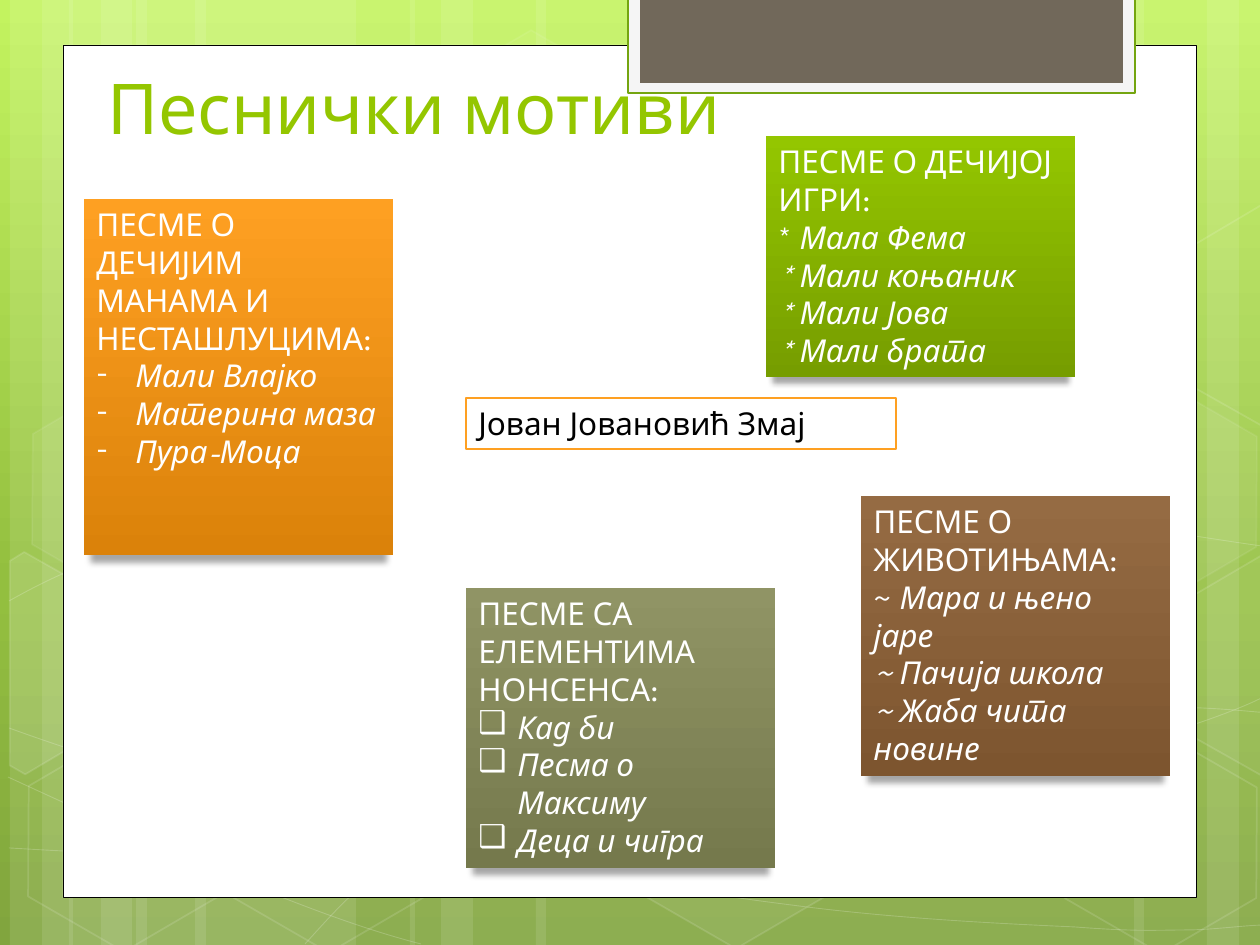
from copy import deepcopy
from math import cos, radians, sin

from lxml import etree
from pptx import Presentation
from pptx.dml.color import RGBColor
from pptx.enum.shapes import MSO_SHAPE
from pptx.enum.text import MSO_ANCHOR, PP_ALIGN
from pptx.oxml.ns import qn
from pptx.util import Emu, Pt

RECTANGLE, HEXAGON = MSO_SHAPE.RECTANGLE, MSO_SHAPE.HEXAGON
TOP, BOTTOM = MSO_ANCHOR.TOP, MSO_ANCHOR.BOTTOM
LEFT = PP_ALIGN.LEFT

EMU_PER_PX = 914400 / 126
WIDTH, HEIGHT = 1260, 945
FONT = "League Spartan"
LANGUAGE = "sr-Cyrl-RS"
INDENT = 39
TILT = 30

WHITE = RGBColor(0xFF, 0xFF, 0xFF)
BLACK = RGBColor(0, 0, 0)
LIME = RGBColor(0x94, 0xC6, 0x00)
DARK_LIME = RGBColor(0x76, 0x9D, 0x00)
ORANGE = RGBColor(0xFE, 0xA0, 0x22)
DARK_ORANGE = RGBColor(0xDB, 0x82, 0x0A)
BROWN = RGBColor(0x95, 0x6B, 0x43)
DARK_BROWN = RGBColor(0x7D, 0x55, 0x2F)
OLIVE = RGBColor(0x90, 0x94, 0x65)
DARK_OLIVE = RGBColor(0x75, 0x79, 0x4C)
TAB_BORDER = RGBColor(0x74, 0xA5, 0x10)
TAB_PAPER = RGBColor(0xF5, 0xF5, 0xF5)
TAB_GRAY = RGBColor(0x71, 0x68, 0x5A)
BACKGROUND_STOPS = [(0, RGBColor(0xC3, 0xF3, 0x5F)), (0.62, RGBColor(0x93, 0xBF, 0x3F)),
                    (1, RGBColor(0x81, 0xA5, 0x3E))]

# left, width
STRIPES = [(136, 220), (10, 63), (42, 105), (195, 220), (69, 63), (101, 105),
           (924, 220), (1207, 63), (1134, 105), (536, 388), (410, 63), (441, 105)]
# start, then two controls and an end for each Bézier segment
CURVES = [
    [(9, 848), (77, 852), (145, 856), (239, 854), (334, 853), (451, 851), (577, 838),
     (703, 825), (882, 802), (998, 777), (1113, 753), (1231, 716), (1269, 694)],
    [(9, 601), (45, 581), (82, 562), (152, 543), (229, 524), (326, 496), (437, 488),
     (549, 479), (685, 478), (824, 488), (963, 497), (1193, 537), (1269, 547)],
    [(8, 777), (160, 847), (311, 916), (421, 944)],
    [(9, 728), (48, 742), (88, 756), (161, 776), (234, 795), (344, 827), (450, 848),
     (554, 869), (687, 892), (791, 905), (896, 919), (1008, 924), (1075, 927),
     (1140, 932), (1158, 930), (1191, 930), (1223, 929), (1246, 925), (1269, 925)],
    [(305, 944), (328, 919), (350, 893), (381, 871), (411, 848), (454, 823), (489, 805),
     (524, 788), (546, 780), (592, 767), (638, 754), (722, 737), (766, 728),
     (811, 719), (818, 719), (857, 717), (896, 713), (958, 709), (1000, 708),
     (1045, 707), (1116, 708), (1116, 708), (1116, 708), (1201, 708), (1201, 708),
     (1224, 709), (1245, 711), (1256, 712), (1268, 713), (1264, 712), (1268, 713)],
]
# left, top, fill opacity, line opacity
HEXAGONS = [(421, 45, 4, 8), (626, 742, 6, 12), (14, 745, None, 12), (18, 393, 7, 8),
            (219, 746, None, 12), (949, 571, 10, 12), (1051, 747, None, 12), (1051, 396, 7, 8)]
# points, fill opacity
CUT_HEXAGONS = [
    ([(10, 561), (24, 552), (121, 607), (120, 718), (25, 774), (10, 765)], 10),
    ([(1167, 611), (1261, 556), (1271, 562), (1271, 772), (1263, 777), (1167, 722)], 4),
    ([(1167, 261), (1261, 205), (1273, 212), (1271, 422), (1263, 427), (1167, 372)], None),
]
# box, gradient, heading, bullet character, typed mark, poems
CARDS = [
    ((766, 136, 309, 241), (LIME, DARK_LIME), "ПЕСМЕ О ДЕЧИЈОЈ ИГРИ:", None, "* ",
     ["Мала Фема", "Мали коњаник", "Мали Јова", "Мали брата"]),
    ((84, 199, 309, 356), (ORANGE, DARK_ORANGE), "ПЕСМЕ О ДЕЧИЈИМ МАНАМА И НЕСТАШЛУЦИМА:", "-", "",
     ["Мали Влајко", "Материна маза", "Пура-Моца"]),
    ((861, 496, 309, 280), (BROWN, DARK_BROWN), "ПЕСМЕ О ЖИВОТИЊАМА:", None, "~ ",
     ["Мара и њено јаре", "Пачија школа", "Жаба чита новине"]),
    ((466, 588, 309, 280), (OLIVE, DARK_OLIVE), "ПЕСМЕ СА ЕЛЕМЕНТИМА НОНСЕНСА:", "❑", "",
     ["Кад би", "Песма о Максиму", "Деца и чигра"]),
]


def px(value):
    return Emu(round(value * EMU_PER_PX))


def style_shape(shape, fill=None, line=None, line_width=1.25):
    """Apply fill and line; a number stands for white at that opacity."""
    shape.shadow.inherit = False
    for target, paint in ((shape.fill, fill), (shape.line.fill, line)):
        if paint is None:
            target.background()
            continue
        target.solid()
        target.fore_color.rgb = WHITE if isinstance(paint, int) else paint
        if isinstance(paint, int):
            color = target._xPr.find(".//" + qn("a:srgbClr"))
            etree.SubElement(color, qn("a:alpha")).set("val", str(paint * 1000))
    if line is not None:
        shape.line.width = Pt(line_width)


def add_box(slide, box, *style, kind=RECTANGLE):
    shape = slide.shapes.add_shape(kind, *map(px, box))
    style_shape(shape, *style)
    return shape


def add_outline(slide, points, close, *style):
    builder = slide.shapes.build_freeform(*points[0], scale=EMU_PER_PX)
    builder.add_line_segments(points[1:], close=close)
    shape = builder.convert_to_shape()
    style_shape(shape, *style)
    return shape


def add_curve(slide, points):
    """Join each three line segments into one cubic Bézier segment."""
    shape = add_outline(slide, points, False, None, 20, 0.5)
    outline = next(shape._element.iter(qn("a:path")))
    lines = outline.findall(qn("a:lnTo"))
    for first in range(0, len(lines), 3):
        curve = etree.SubElement(outline, qn("a:cubicBezTo"))
        for line in lines[first:first + 3]:
            curve.append(line[0])
            outline.remove(line)


def turn(point, degrees):
    x, y = point
    cosine, sine = cos(radians(degrees)), sin(radians(degrees))
    return x * cosine - y * sine, x * sine + y * cosine


def add_cut_hexagon(slide, points, fill):
    """Draw the outline upright, then tilt it back into its place."""
    upright = [turn(point, -TILT) for point in points]
    shape = add_outline(slide, upright, True, fill, 12, 1)
    middle = [(min(values) + max(values)) / 2 for values in zip(*upright)]
    center_x, center_y = turn(middle, TILT)
    shape.left = px(center_x) - shape.width // 2
    shape.top = px(center_y) - shape.height // 2
    shape.rotation = TILT


def set_gradient(fill, colors):
    fill.gradient()
    fill.gradient_angle = 270
    for stop, color in zip(fill.gradient_stops, colors):
        stop.color.rgb = color


def set_background(slide):
    fill = slide.background.fill
    set_gradient(fill, (WHITE, WHITE))
    stop_list = next(slide._element.iter(qn("a:gsLst")))
    stop_list.append(deepcopy(stop_list[-1]))
    for stop, (position, color) in zip(fill.gradient_stops, BACKGROUND_STOPS):
        stop.position = position
        stop.color.rgb = color


def add_backdrop(slide):
    set_background(slide)
    for left, width in STRIPES:
        add_box(slide, (left, 0, width, HEIGHT), 10)
    for points in CURVES:
        add_curve(slide, points)
    for left, top, fill, line in HEXAGONS:
        hexagon = add_box(slide, (left, top, 220, 192), fill, line, 1, kind=HEXAGON)
        hexagon.adjustments[0] = 0.285
        hexagon.rotation = TILT
    for points, fill in CUT_HEXAGONS:
        add_cut_hexagon(slide, points, fill)
    add_box(slide, (63, 45, 1134, 853), WHITE, BLACK, 0.5)
    add_box(slide, (628, -3, 507, 96), TAB_PAPER, TAB_BORDER)
    add_box(slide, (640, -3, 483, 86), TAB_GRAY)


def format_run(run, color, size=18, italic=None):
    run.font.name = FONT
    run.font.size = Pt(size)
    run.font.color.rgb = color
    run.font.italic = italic
    run._r.get_or_add_rPr().set("lang", LANGUAGE)


def write_line(shape, text, color, size=18, anchor=TOP):
    frame = shape.text_frame
    frame.word_wrap = True
    frame.vertical_anchor = anchor
    frame.text = text
    frame.paragraphs[0].alignment = LEFT
    format_run(frame.paragraphs[0].runs[0], color, size)


def set_bullet(paragraph, character):
    properties = paragraph._p.get_or_add_pPr()
    properties.set("marL", str(px(INDENT)))
    properties.set("indent", str(-px(INDENT)))
    etree.SubElement(properties, qn("a:buFont")).set("typeface", FONT)
    etree.SubElement(properties, qn("a:buChar")).set("char", character)


def add_soft_shadow(shape):
    effects = shape._element.spPr.find(qn("a:effectLst"))
    shadow = etree.SubElement(effects, qn("a:outerShdw"), blurRad="44450", dist="50800",
                              dir="5400000", sx="96000", rotWithShape="0")
    color = etree.SubElement(shadow, qn("a:srgbClr"), val="000000")
    etree.SubElement(color, qn("a:alpha"), val="34000")


def add_card(slide, box, colors, heading, bullet, mark, poems):
    card = add_box(slide, box)
    set_gradient(card.fill, colors)
    add_soft_shadow(card)
    write_line(card, heading, WHITE)
    for index, poem in enumerate(poems):
        paragraph = card.text_frame.add_paragraph()
        paragraph.alignment = LEFT
        if bullet:
            set_bullet(paragraph, bullet)
        parts = [(mark, None), (poem, True)] if mark and index == 0 else [(mark + poem, True)]
        for text, italic in parts:
            run = paragraph.add_run()
            run.text = text
            format_run(run, WHITE, italic=italic)


def main():
    presentation = Presentation()
    presentation.slide_width, presentation.slide_height = px(WIDTH), px(HEIGHT)
    slide = presentation.slides.add_slide(presentation.slide_layouts[6])
    add_backdrop(slide)
    title = slide.shapes.add_textbox(*map(px, (95, -3, 968, 158)))
    write_line(title, "Песнички мотиви", LIME, 40, BOTTOM)
    poet = add_box(slide, (466, 398, 430, 51), WHITE, ORANGE)
    write_line(poet, "Јован Јовановић Змај", BLACK)
    for card in CARDS:
        add_card(slide, *card)
    presentation.save("out.pptx")


if __name__ == "__main__":
    main()
